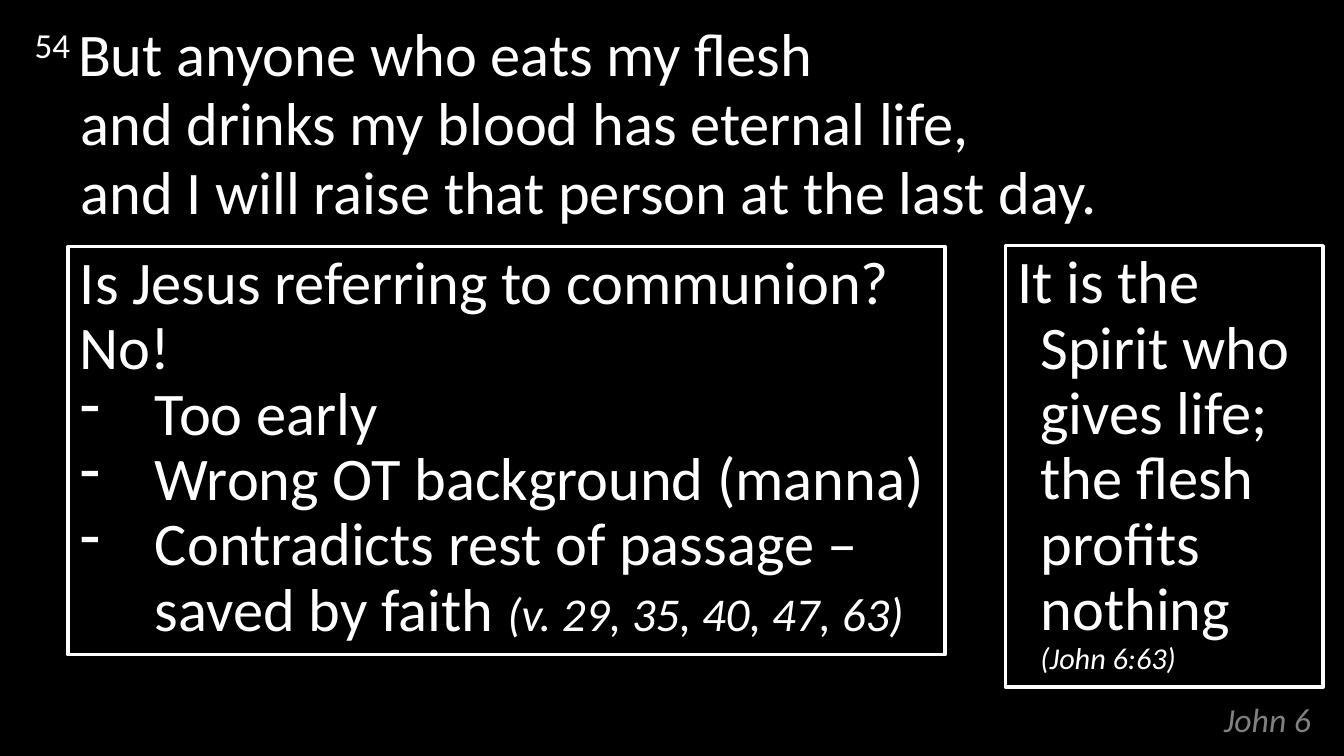
from dataclasses import dataclass

from lxml.etree import SubElement
from pptx import Presentation
from pptx.dml.color import RGBColor
from pptx.enum.shapes import MSO_SHAPE
from pptx.enum.text import MSO_ANCHOR, MSO_AUTO_SIZE, PP_ALIGN
from pptx.oxml.ns import qn
from pptx.util import Inches, Pt

CELL = Inches(1 / 16)  # grid step for columns and rows


@dataclass(frozen=True)
class Theme:
    font: str = "Calibri"
    background: RGBColor = RGBColor(0, 0, 0)
    text: RGBColor = RGBColor(255, 255, 255)
    muted: RGBColor = RGBColor(128, 128, 128)
    body: int = 36
    reference: int = 28
    footer: int = 20
    citation: int = 18
    outline: int = 2


THEME = Theme()


def grid_box(column, row, columns, rows):
    return [int(CELL * cells) for cells in (column, row, columns, rows)]


def apply(target, values):
    for name, value in values.items():
        setattr(target, name, value)


def add_run(paragraph, text, size=THEME.body, color=THEME.text, italic=None, raised=False):
    """Add text in one style; each newline becomes a line break."""
    for index, line in enumerate(text.split("\n")):
        if index:
            paragraph.add_line_break()
        if not line:
            continue
        run = paragraph.add_run()
        run.text = line
        apply(run.font, {"name": THEME.font, "size": Pt(size), "italic": italic})
        run.font.color.rgb = color
        if raised:
            run.font._element.set("baseline", "30000")


def format_paragraph(paragraph, spacing, hanging=0, bullet=None, align=PP_ALIGN.LEFT):
    apply(paragraph, {"line_spacing": spacing, "alignment": align})
    properties = paragraph._p.get_or_add_pPr()
    properties.set("marL", str(Inches(hanging)))
    properties.set("indent", str(-Inches(hanging)))
    if bullet:
        SubElement(properties, qn("a:buChar")).set("char", bullet)


def add_footer_title(slide, box, text):
    title = slide.shapes.title
    apply(title, dict(zip(("left", "top", "width", "height"), box)))
    frame = title.text_frame
    apply(frame, {"word_wrap": True, "vertical_anchor": MSO_ANCHOR.BOTTOM,
                  "auto_size": MSO_AUTO_SIZE.NONE})
    paragraph = frame.paragraphs[0]
    format_paragraph(paragraph, 0.8, align=PP_ALIGN.RIGHT)
    add_run(paragraph, text, THEME.footer, THEME.muted, italic=True)


def add_verse(slide, box, number, text):
    frame = slide.shapes.add_textbox(*box).text_frame
    frame.word_wrap = True
    paragraph = frame.paragraphs[0]
    format_paragraph(paragraph, 0.95, hanging=0.38)
    add_run(paragraph, number, raised=True)
    add_run(paragraph, text)


def add_note(slide, box, entries):
    """Outlined box; an entry is (hanging indent, bullet, text, citation, citation size)."""
    note = slide.shapes.add_shape(MSO_SHAPE.ROUNDED_RECTANGLE, *box)
    note.adjustments[0] = 0
    note.shadow.inherit = False
    note.fill.solid()
    note.fill.fore_color.rgb = THEME.background
    note.line.color.rgb = THEME.text
    note.line.width = Pt(THEME.outline)
    frame = note.text_frame
    apply(frame, {"word_wrap": True, "vertical_anchor": MSO_ANCHOR.TOP,
                  "auto_size": MSO_AUTO_SIZE.SHAPE_TO_FIT_TEXT})
    for index, (hanging, bullet, text, citation, size) in enumerate(entries):
        paragraph = frame.add_paragraph() if index else frame.paragraphs[0]
        format_paragraph(paragraph, 0.9, hanging, bullet)
        add_run(paragraph, text)
        if citation:
            add_run(paragraph, citation, size, italic=True)


def build_verse_slide(presentation):
    slide = presentation.slides.add_slide(presentation.slide_layouts[5])
    slide.background.fill.solid()
    slide.background.fill.fore_color.rgb = THEME.background

    # Chapter label and verse
    add_footer_title(slide, grid_box(113, 89, 62, 9.5), "John 6")
    add_verse(slide, grid_box(3, 2, 172, 84.5), "54 ",
              "But anyone who eats my flesh \n"
              "and drinks my blood has eternal life, \n"
              "and I will raise that person at the last day.")

    # Question with its reasons
    statements = ["Is Jesus referring to communion?", "No!"]
    reasons = [("Too early", None), ("Wrong OT background (manna)", None),
               ("Contradicts rest of passage – \nsaved by faith ", "(v. 29, 35, 40, 47, 63)")]
    entries = [(0.26, None, text, None, None) for text in statements]
    entries += [(0.62, "-", text, citation, THEME.reference) for text, citation in reasons]
    add_note(slide, grid_box(9, 32.6, 116, 54), entries)

    # Supporting quotation
    quotation = "It is the \nSpirit who gives life; the flesh profits nothing \n"
    add_note(slide, grid_box(133, 32.5, 42, 58.4),
             [(0.19, None, quotation, "(John 6:63)", THEME.citation)])


def main():
    presentation = Presentation()
    apply(presentation, {"slide_width": Inches(11.11), "slide_height": Inches(6.25)})
    build_verse_slide(presentation)
    presentation.save("out.pptx")


if __name__ == "__main__":
    main()
